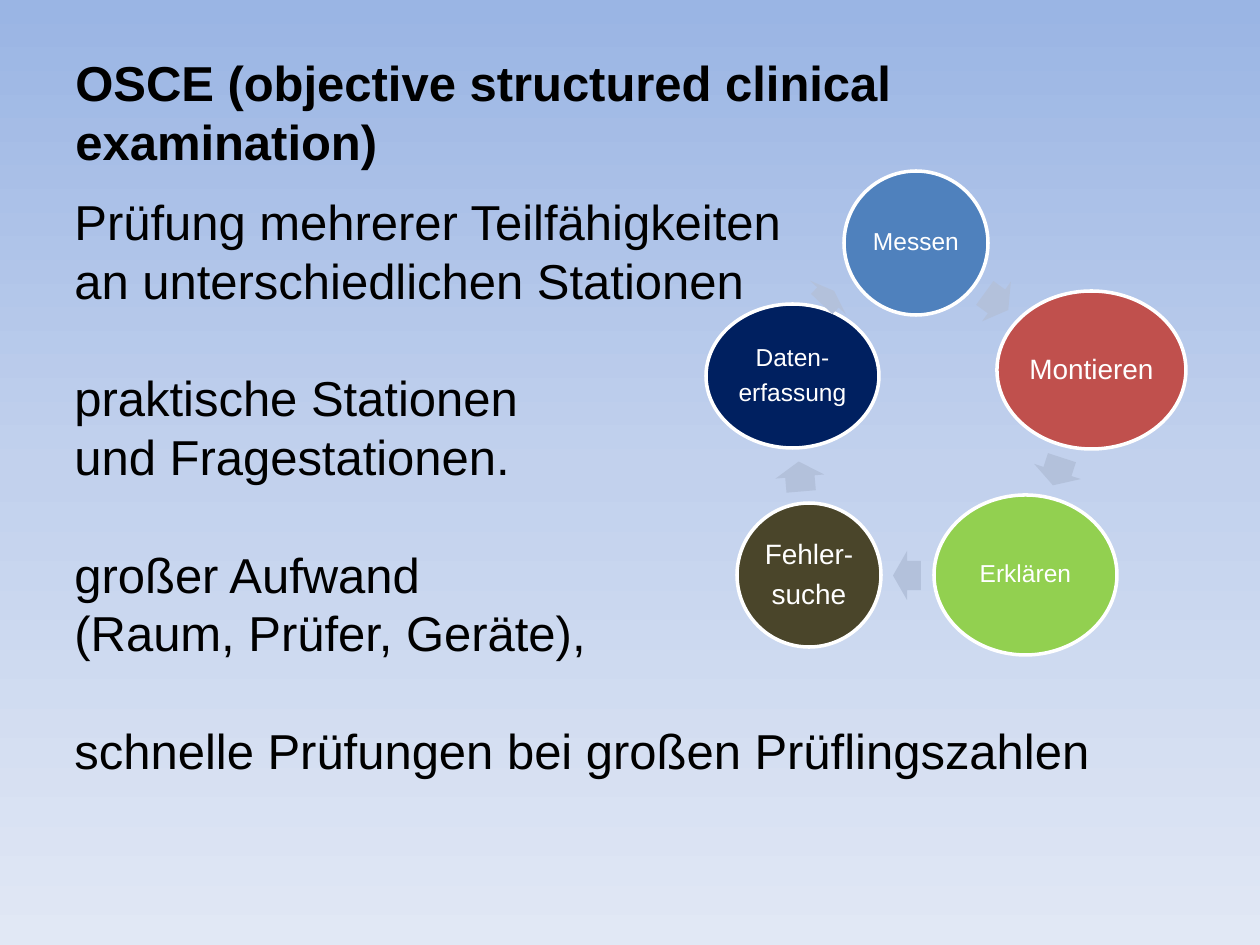
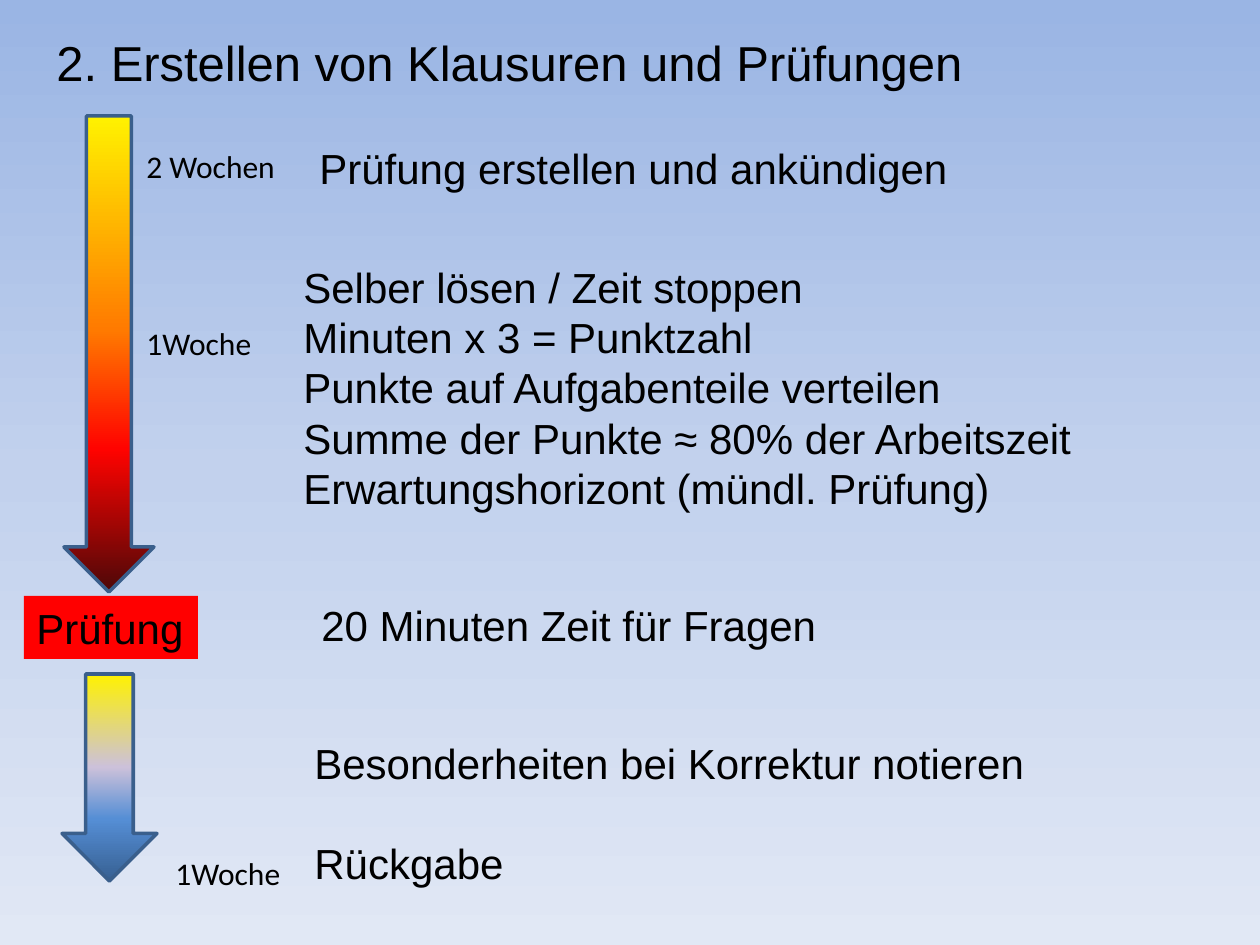
from dataclasses import dataclass

from lxml.etree import SubElement
from pptx import Presentation
from pptx.dml.color import RGBColor
from pptx.enum.shapes import MSO_SHAPE as Shape
from pptx.enum.text import MSO_ANCHOR as Anchor, MSO_AUTO_SIZE as AutoSize, PP_ALIGN as Align
from pptx.oxml.ns import qn
from pptx.util import Emu, Pt

PX = 914400 // 126  # EMU per pixel


@dataclass(frozen=True)
class Theme:
    text: str = "000000"
    light: str = "FFFFFF"
    cycle_arrow: str = "B3C1DB"
    outline: str = "3A5F8C"
    alert: str = "FF0000"
    sky: tuple = ((0, "9AB5E4"), (50, "C2D1ED"), (100, "E1E8F5"))
    fire: tuple = ((0, "FFF200"), (45, "FF7A00"), (70, "FF0300"), (100, "4D0808"))
    calm: tuple = ((0, "FFF200"), (45, "CCC1DA"), (70, "558ED5"), (100, "376092"))
    font: str = "Arial"
    time_font: str = "Calibri"
    title_size: int = 28
    body_size: int = 24
    time_size: int = 18
    line_height: float = 1.2  # one line, as a multiple of the type size


THEME = Theme()


def px(*lengths):
    return [Emu(round(length * PX)) for length in lengths]


def paint_gradient(fill, owner, stops):
    """Fill from top to bottom with (percent, colour) stops."""
    fill.gradient()
    fill.gradient_angle = 270
    stop_list = owner.element.find(".//" + qn("a:gsLst"))
    for old in list(stop_list):
        stop_list.remove(old)
    for percent, color in stops:
        stop = SubElement(stop_list, qn("a:gs"), pos=str(percent * 1000))
        SubElement(stop, qn("a:srgbClr"), val=color)


def write(frame, lines, size, color=THEME.text, font=THEME.font, bold=False):
    frame.text = "\n".join(lines)
    for para in frame.paragraphs:
        for span in para.runs:
            span.font.size = Pt(size)
            span.font.name = font
            span.font.bold = bold
            span.font.color.rgb = RGBColor.from_string(color)


def add_text(page, at, lines, size=THEME.body_size, wrap=False, gaps=(), **style):
    """Text box; gaps lists the paragraphs that follow one free line."""
    box = page.shapes.add_textbox(*px(*at))
    frame = box.text_frame
    write(frame, lines, size, **style)
    frame.word_wrap = wrap
    frame.auto_size = AutoSize.NONE if wrap else AutoSize.SHAPE_TO_FIT_TEXT
    for index in gaps:
        frame.paragraphs[index].space_before = Pt(size * THEME.line_height)
    return box


def add_figure(page, kind, at, fill=None, line=None, stops=None):
    figure = page.shapes.add_shape(kind, *px(*at))
    figure.shadow.inherit = False
    if stops:
        paint_gradient(figure.fill, figure, stops)
    else:
        figure.fill.solid()
        figure.fill.fore_color.rgb = RGBColor.from_string(fill)
    if line:
        figure.line.color.rgb = RGBColor.from_string(line)
        figure.line.width = Pt(2)
    else:
        figure.line.fill.background()
    return figure


def add_station(page, at, fill, lines, size):
    frame = add_figure(page, Shape.OVAL, at, fill, THEME.light).text_frame
    write(frame, lines, size, THEME.light)
    frame.word_wrap = True
    frame.vertical_anchor = Anchor.MIDDLE
    frame.margin_left = frame.margin_right = frame.margin_top = frame.margin_bottom = px(2)[0]
    for para in frame.paragraphs:
        para.alignment = Align.CENTER
        para.line_spacing = 0.9
        para.space_after = Pt(size * 0.35)


def add_cycle_arrow(page, at, angle):
    arrow = add_figure(page, Shape.RIGHT_ARROW, at, THEME.cycle_arrow)
    arrow.adjustments[0] = 0.6
    arrow.adjustments[1] = 0.5
    arrow.rotation = angle


def add_page(deck):
    page = deck.slides.add_slide(deck.slide_layouts[6])
    paint_gradient(page.background.fill, page, THEME.sky)
    return page


def build_osce(deck):
    page = add_page(deck)
    title = add_text(page, (63, 38, 1134, 147),
                     ["OSCE (objective structured clinical examination)"],
                     THEME.title_size, wrap=True, bold=True)
    title.text_frame.vertical_anchor = Anchor.MIDDLE
    add_text(page, (62, 185, 1120, 665),
             ["Prüfung mehrerer Teilfähigkeiten", "an unterschiedlichen Stationen",
              "praktische Stationen", "und Fragestationen.",
              "großer Aufwand", "(Raum, Prüfer, Geräte),",
              "schnelle Prüfungen bei großen Prüflingszahlen"],
             THEME.title_size, wrap=True, gaps=(2, 4, 6))

    # Cycle: each station, then the arrow that leaves it
    cycle = [
        ((844, 171, 144, 144), "4F81BD", ["Messen"], 14, (982, 277, 29, 49), 36),
        ((997, 291, 189, 158), "C0504D", ["Montieren"], 16, (1043, 447, 29, 49), 108),
        ((934, 495, 183, 160), "92D050", ["Erklären"], 14, (893, 551, 28, 49), 180),
        ((737, 503, 144, 144), "4A452A", ["Fehler-", "suche"], 16, (785, 452, 30, 49), 265.1),
        ((706, 304, 173, 144), "002060", ["Daten-", "erfassung"], 14, (819, 273, 18, 49), 313.3),
    ]
    for at, fill, lines, size, arrow_at, angle in cycle:
        add_station(page, at, fill, lines, size)
        add_cycle_arrow(page, arrow_at, angle)


def build_schedule(deck):
    page = add_page(deck)
    add_text(page, (44, 26, 1181, 111), ["2. Erstellen von Klausuren und Prüfungen"],
             THEME.title_size, wrap=True)

    # Time arrows before and after the exam
    add_figure(page, Shape.DOWN_ARROW, (64, 116, 90, 476), line=THEME.outline, stops=THEME.fire)
    add_figure(page, Shape.DOWN_ARROW, (62, 674, 95, 207), line=THEME.outline, stops=THEME.calm)
    for at, label in [((134, 141, 155, 50), "2 Wochen"),
                      ((134, 318, 131, 50), "1Woche"),
                      ((163, 848, 131, 50), "1Woche")]:
        add_text(page, at, [label], THEME.time_size, font=THEME.time_font)

    # Exam marker
    exam = add_text(page, (24, 596, 174, 63), ["Prüfung"])
    exam.fill.solid()
    exam.fill.fore_color.rgb = RGBColor.from_string(THEME.alert)

    # Tasks
    add_text(page, (307, 136, 660, 102), ["Prüfung erstellen und ankündigen"])
    add_text(page, (291, 255, 873, 267),
             ["Selber lösen / Zeit stoppen", "Minuten x 3 = Punktzahl",
              "Punkte auf Aufgabenteile verteilen",
              "Summe der Punkte ≈ 80% der Arbeitszeit",
              "Erwartungshorizont (mündl. Prüfung)"], wrap=True)
    add_text(page, (309, 593, 525, 63), ["20 Minuten Zeit für Fragen"])
    add_text(page, (302, 731, 743, 165),
             ["Besonderheiten bei Korrektur notieren", "Rückgabe"], gaps=(1,))


def main():
    deck = Presentation()
    deck.slide_width, deck.slide_height = px(1260, 945)
    build_osce(deck)
    build_schedule(deck)
    deck.save("out.pptx")


main()
